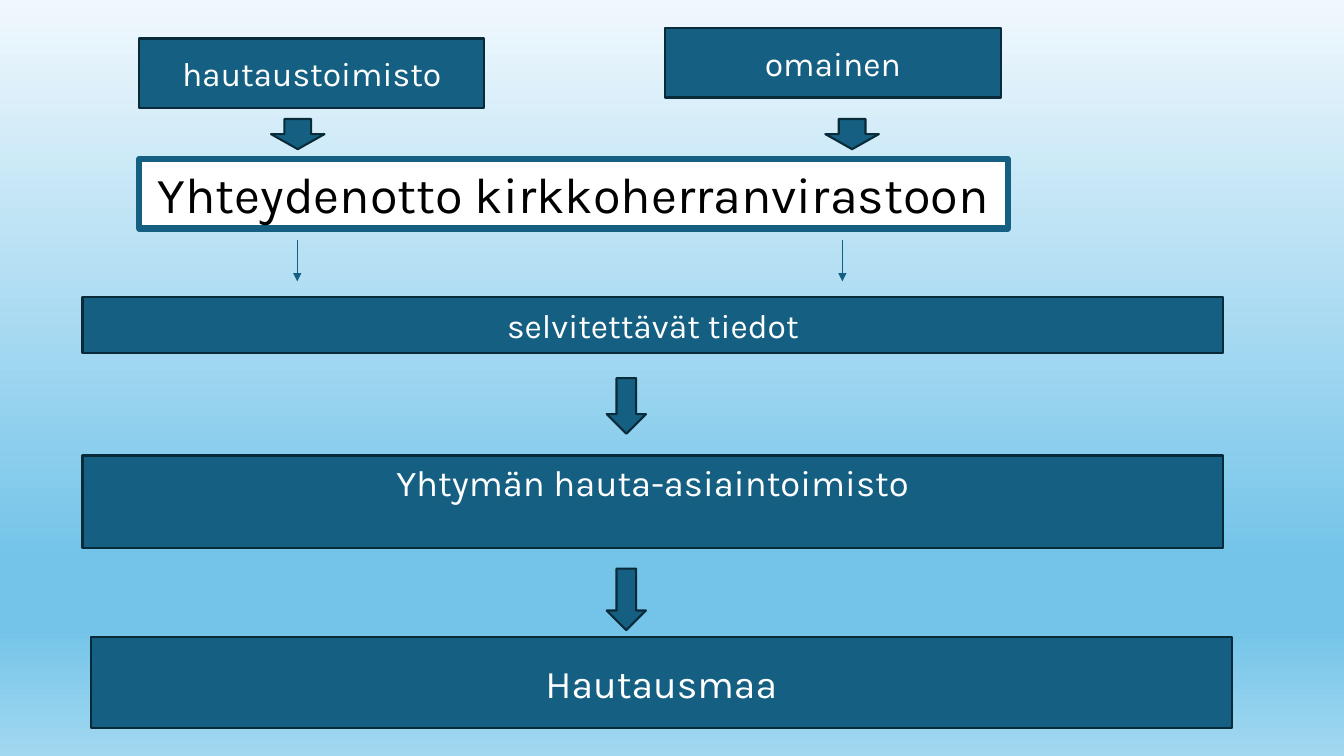
from copy import deepcopy
from dataclasses import dataclass

from lxml import etree
from pptx import Presentation
from pptx import util as u
from pptx.dml import color
from pptx.enum import shapes, text
from pptx.oxml import ns
from pptx.shapes.autoshape import Shape
from pptx.slide import Slide


@dataclass(frozen=True)
class Theme:
    font: str = "Karla"
    blue: str = "156082"
    outline: str = "092A39"
    white: str = "FFFFFF"
    black: str = "000000"
    sky: tuple = ((0, "F0F8FD"), (0.74, "74C4E9"), (0.83, "74C4E9"), (1, "A2D8F0"))
    body: int = 24
    office: int = 26
    cemetery: int = 28
    contact: int = 36
    outline_width: float = 1.5
    contact_outline_width: float = 4.5
    link_width: float = 1


THEME = Theme()


@dataclass(frozen=True)
class Step:
    label: str
    left: float
    top: float
    width: float
    height: float
    size: int = THEME.body
    fill: str = THEME.blue
    ink: str = THEME.white
    outline: str = THEME.outline
    outline_width: float = THEME.outline_width
    anchor: text.MSO_ANCHOR = text.MSO_ANCHOR.MIDDLE


@dataclass(frozen=True)
class BlockArrow:
    left: float
    top: float
    width: float
    height: float


@dataclass(frozen=True)
class Link:
    x: float
    top: float = 6.05
    bottom: float = 7.09


BAR_LEFT, BAR_WIDTH = 2.08, 28.75
CALLER_HEIGHT = 1.75

STEPS = (
    Step("Yhteydenotto kirkkoherranvirastoon", 3.51, 4.01, 21.89, CALLER_HEIGHT,
         size=THEME.contact, fill=THEME.white, ink=THEME.black,
         outline=THEME.blue, outline_width=THEME.contact_outline_width),
    Step("omainen", 16.76, 0.71, 8.46, CALLER_HEIGHT),
    Step("selvitettävät tiedot", BAR_LEFT, 7.49, BAR_WIDTH, 1.4),
    Step("hautaustoimisto", 3.51, 0.97, 8.69, CALLER_HEIGHT),
    Step("Yhtymän hauta-asiaintoimisto", BAR_LEFT, 11.48, BAR_WIDTH, 2.34,
         size=THEME.office, anchor=text.MSO_ANCHOR.TOP),
    Step("Hautausmaa", 2.29, 16.05, BAR_WIDTH, 2.29, size=THEME.cemetery),
)
LINKS = (Link(7.49), Link(21.23))
BLOCK_ARROWS = (
    BlockArrow(6.83, 3, 1.35, 0.76),
    BlockArrow(20.8, 3, 1.35, 0.76),
    BlockArrow(15.29, 9.53, 0.99, 1.4),
    BlockArrow(15.29, 14.33, 0.99, 1.55),
)


def rgb(code: str) -> color.RGBColor:
    return color.RGBColor.from_string(code)


def paint_sky(slide: Slide) -> None:
    fill = slide.background.fill
    fill.gradient()
    fill.gradient_angle = 270
    stop_list = next(slide.element.iter(ns.qn("a:gsLst")))
    while len(stop_list) < len(THEME.sky):
        stop_list.append(deepcopy(stop_list[0]))
    for stop, (position, code) in zip(fill.gradient_stops, THEME.sky):
        stop.position = position
        stop.color.rgb = rgb(code)


def add_block(slide: Slide, kind: shapes.MSO_SHAPE, part: Step | BlockArrow,
              fill: str, outline: str, outline_width: float) -> Shape:
    block = slide.shapes.add_shape(kind, u.Cm(part.left), u.Cm(part.top),
                                   u.Cm(part.width), u.Cm(part.height))
    block.shadow.inherit = False
    block.fill.solid()
    block.fill.fore_color.rgb = rgb(fill)
    block.line.color.rgb = rgb(outline)
    block.line.width = u.Pt(outline_width)
    return block


def draw_step(slide: Slide, step: Step) -> None:
    box = add_block(slide, shapes.MSO_SHAPE.RECTANGLE, step,
                    step.fill, step.outline, step.outline_width)
    frame = box.text_frame
    frame.word_wrap = True
    frame.vertical_anchor = step.anchor
    frame.text = step.label
    paragraph = frame.paragraphs[0]
    paragraph.alignment = text.PP_ALIGN.CENTER
    font = paragraph.runs[0].font
    font.name = THEME.font
    font.size = u.Pt(step.size)
    font.color.rgb = rgb(step.ink)


def draw_block_arrow(slide: Slide, arrow: BlockArrow) -> None:
    add_block(slide, shapes.MSO_SHAPE.DOWN_ARROW, arrow,
              THEME.blue, THEME.outline, THEME.outline_width)


def draw_link(slide: Slide, link: Link) -> None:
    connector = slide.shapes.add_connector(
        shapes.MSO_CONNECTOR.STRAIGHT,
        u.Cm(link.x), u.Cm(link.top), u.Cm(link.x), u.Cm(link.bottom))
    connector.line.color.rgb = rgb(THEME.blue)
    connector.line.width = u.Pt(THEME.link_width)
    properties = connector.element.spPr
    outline = properties.find(ns.qn("a:ln"))
    etree.SubElement(outline, ns.qn("a:tailEnd"), type="triangle")
    etree.SubElement(properties, ns.qn("a:effectLst"))


def main() -> None:
    deck = Presentation()
    deck.slide_width, deck.slide_height = u.Cm(33.87), u.Cm(19.05)
    slide = deck.slides.add_slide(deck.slide_layouts.get_by_name("Blank"))
    paint_sky(slide)
    for step in STEPS:
        draw_step(slide, step)
    for link in LINKS:
        draw_link(slide, link)
    for arrow in BLOCK_ARROWS:
        draw_block_arrow(slide, arrow)
    deck.save("out.pptx")


if __name__ == "__main__":
    main()
